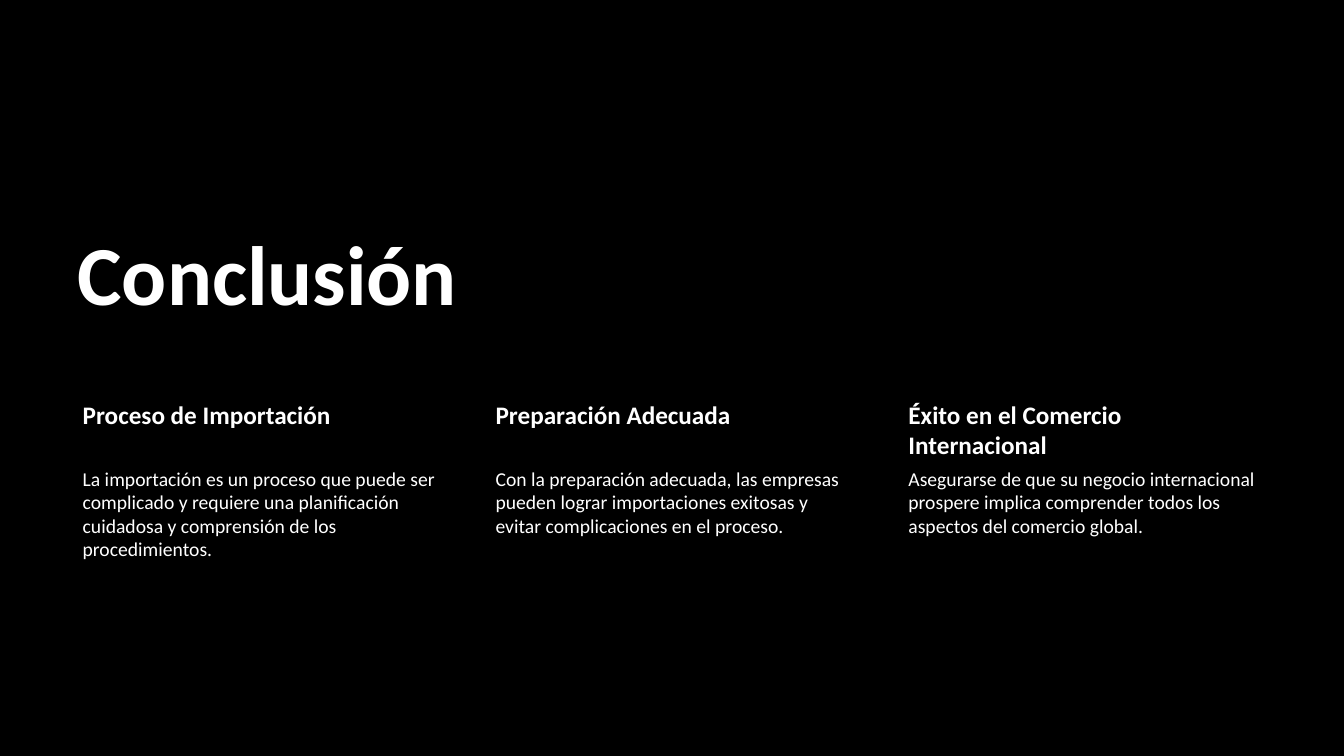
"""Build the closing slide with a title and three columns of conclusions."""
from pptx import Presentation
from pptx.dml.color import RGBColor
from pptx.enum.text import MSO_ANCHOR
from pptx.util import Inches, Pt


def rgb(value):
    return RGBColor.from_string(value)


def add_text(slide, text, box, insets, frame, paragraph, font):
    sp = slide.shapes.add_textbox(*[Inches(v) for v in box])
    tf = sp.text_frame
    p = tf.paragraphs[0]
    r = p.add_run()
    r.text = text
    sides = ("margin_left", "margin_top", "margin_right", "margin_bottom")
    margins = {side: Inches(v) for side, v in zip(sides, insets)}
    formats = (
        (tf, {"word_wrap": True, **margins, **frame}),
        (p, paragraph),
        (r.font, {"name": "Calibri", **font}),
    )
    for target, values in formats:
        for name, value in values.items():
            setattr(target, name, value)
    r.font.color.rgb = rgb("FFFFFF")


prs = Presentation()
prs.slide_width = Inches(13.33)
prs.slide_height = Inches(7.5)
s = prs.slides.add_slide(prs.slide_layouts[6])
s.background.fill.solid()
s.background.fill.fore_color.rgb = rgb("000000")

add_text(s, "Conclusión", (0.67, 2.02, 8.03, 1.24), (0.1, 0.05, 0.1, 0.05),
         {"vertical_anchor": MSO_ANCHOR.BOTTOM}, {"line_spacing": 0.9},
         {"size": Pt(60), "bold": True})

columns = [
    ("Proceso de Importación",
     "La importación es un proceso que puede ser complicado y requiere una "
     "planificación cuidadosa y comprensión de los procedimientos."),
    ("Preparación Adecuada",
     "Con la preparación adecuada, las empresas pueden lograr importaciones "
     "exitosas y evitar complicaciones en el proceso."),
    ("Éxito en el Comercio Internacional",
     "Asegurarse de que su negocio internacional prospere implica comprender "
     "todos los aspectos del comercio global."),
]
left, pitch, width = 0.67, 4.095, 3.72
top_anchor = {"vertical_anchor": MSO_ANCHOR.TOP}

for i, (heading, body) in enumerate(columns):
    x = left + i * pitch
    add_text(s, heading, (x, 3.93, width, 0.68), (0.15, 0.03, 0.03, 0.03),
             top_anchor, {"space_after": Pt(6.3)}, {"size": Pt(18), "bold": True})
    add_text(s, body, (x, 4.61, width, 2.06), (0.15, 0.02, 0.02, 0.02),
             top_anchor, {"space_after": Pt(4.9)}, {"size": Pt(14), "bold": False})

prs.save("out.pptx")
